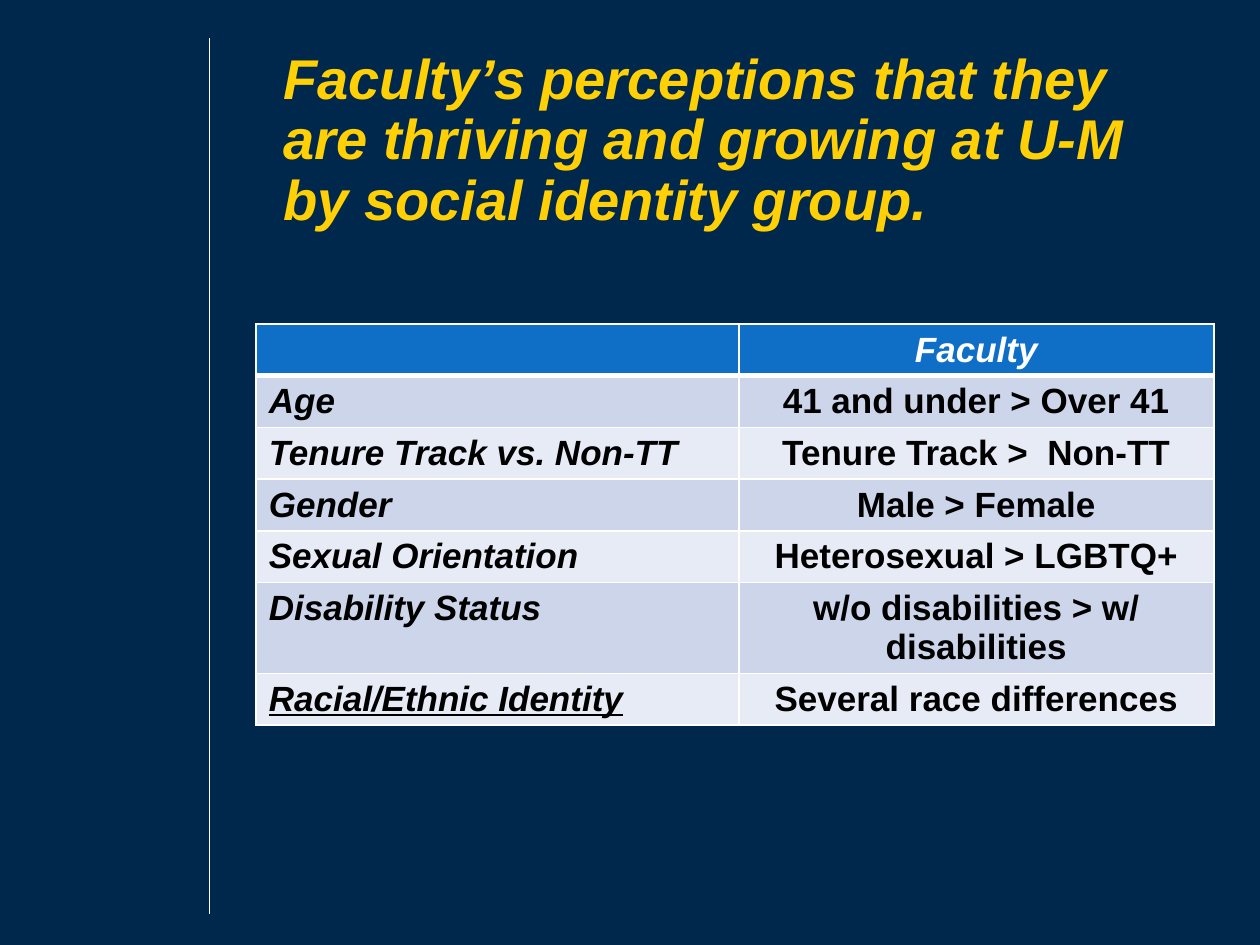
from pptx import Presentation
from pptx.dml.color import RGBColor
from pptx.enum.shapes import MSO_CONNECTOR as Connector
from pptx.enum.text import MSO_ANCHOR as Anchor, MSO_AUTO_SIZE as AutoSize, PP_ALIGN as Align
from pptx.oxml import parse_xml
from pptx.oxml.ns import nsdecls
from pptx.util import Pt

NAVY, MAIZE, BLUE, WHITE, BLACK = "00274C", "FFD006", "0F6FC6", "FFFFFF", "000000"
BANDS = ("CCD5EA", "E7EBF5")
TITLE = "Faculty’s perceptions that they are thriving and growing at U-M by social identity group."
ROWS = [
    ("", "Faculty"),
    ("Age", "41 and under > Over 41"),
    ("Tenure Track vs. Non-TT", "Tenure Track >  Non-TT"),
    ("Gender", "Male > Female"),
    ("Sexual Orientation", "Heterosexual > LGBTQ+"),
    ("Disability Status", "w/o disabilities > w/ disabilities"),
    ("Racial/Ethnic Identity", "Several race differences"),
]
COLUMN_SHARES = (0.504, 0.496)
ROW_HEIGHTS = [29.5] * 5 + [52, 29.5]
TABLE_FONT = {"name": "Arial", "size": Pt(20), "bold": True}


def set_color(color_format, value):
    """Give a font colour or a solid fill its hex colour."""
    color_format.rgb = RGBColor.from_string(value)


def set_fill(fill, color):
    """Make a fill solid in a hex colour."""
    fill.solid()
    set_color(fill.fore_color, color)


def format_font(font, color, values):
    """Apply a dict of format values and a colour to a font."""
    for name, value in values.items():
        setattr(font, name, value)
    set_color(font.color, color)


def set_borders(cell, widths):
    """Draw white cell borders from a dict of side and width in points."""
    properties = cell._tc.get_or_add_tcPr()
    for index, (side, width) in enumerate(widths.items()):
        properties.insert(index, parse_xml(
            f'<a:ln{side} {nsdecls("a")} w="{Pt(width)}"><a:solidFill>'
            f'<a:srgbClr val="{WHITE}"/></a:solidFill></a:ln{side}>'))


def add_title(slide, left, top, width, height):
    """Place and format the slide title in the given box."""
    shape = slide.shapes.title
    shape.left, shape.top, shape.width, shape.height = map(Pt, (left, top, width, height))
    frame = shape.text_frame
    frame.text = TITLE
    for name, value in {"word_wrap": True, "auto_size": AutoSize.NONE,
                        "vertical_anchor": Anchor.MIDDLE}.items():
        setattr(frame, name, value)
    paragraph = frame.paragraphs[0]
    paragraph.alignment = Align.LEFT
    paragraph.line_spacing = 0.9
    format_font(paragraph.runs[0].font, MAIZE,
                {"name": "Arial", "size": Pt(32), "bold": True, "italic": True})


def add_divider(slide, left, top, height):
    """Draw the thin vertical rule beside the content."""
    line = slide.shapes.add_connector(
        Connector.STRAIGHT, Pt(left), Pt(top), Pt(left), Pt(top + height))
    line.line.width = Pt(0.5)
    set_fill(line.line.fill, WHITE)
    line._element.spPr.append(parse_xml(f'<a:effectLst {nsdecls("a")}/>'))


def add_comparison_table(slide, left, top, width):
    """Build the banded table of group differences."""
    table = slide.shapes.add_table(
        len(ROWS), len(COLUMN_SHARES), Pt(left), Pt(top), Pt(width), Pt(sum(ROW_HEIGHTS))).table
    for column, share in zip(table.columns, COLUMN_SHARES):
        column.width = Pt(width * share)
    for row_index, texts in enumerate(ROWS):
        table.rows[row_index].height = Pt(ROW_HEIGHTS[row_index])
        header = row_index == 0
        for column_index, text in enumerate(texts):
            cell = table.cell(row_index, column_index)
            cell.text = text
            set_fill(cell.fill, BLUE if header else BANDS[(row_index - 1) % 2])
            set_borders(cell, {"L": 1, "R": 1, "T": 3 if row_index == 1 else 1,
                               "B": 3 if header else 1})
            paragraph = cell.text_frame.paragraphs[0]
            paragraph.alignment = Align.CENTER if column_index else Align.LEFT
            for run in paragraph.runs:
                format_font(run.font, WHITE if header else BLACK, {
                    **TABLE_FONT, "italic": header or column_index == 0,
                    "underline": text == "Racial/Ethnic Identity"})


def main():
    """Build the slide and save it."""
    presentation = Presentation()
    presentation.slide_width, presentation.slide_height = Pt(720), Pt(540)
    slide = presentation.slides.add_slide(presentation.slide_layouts[5])
    set_fill(slide.background.fill, NAVY)
    add_divider(slide, 119.5, 21.6, 500.4)
    add_title(slide, 154.8, 28.8, 530.64, 104.4)
    add_comparison_table(slide, 146.4, 185.2, 547.2)
    presentation.save("out.pptx")


if __name__ == "__main__":
    main()
